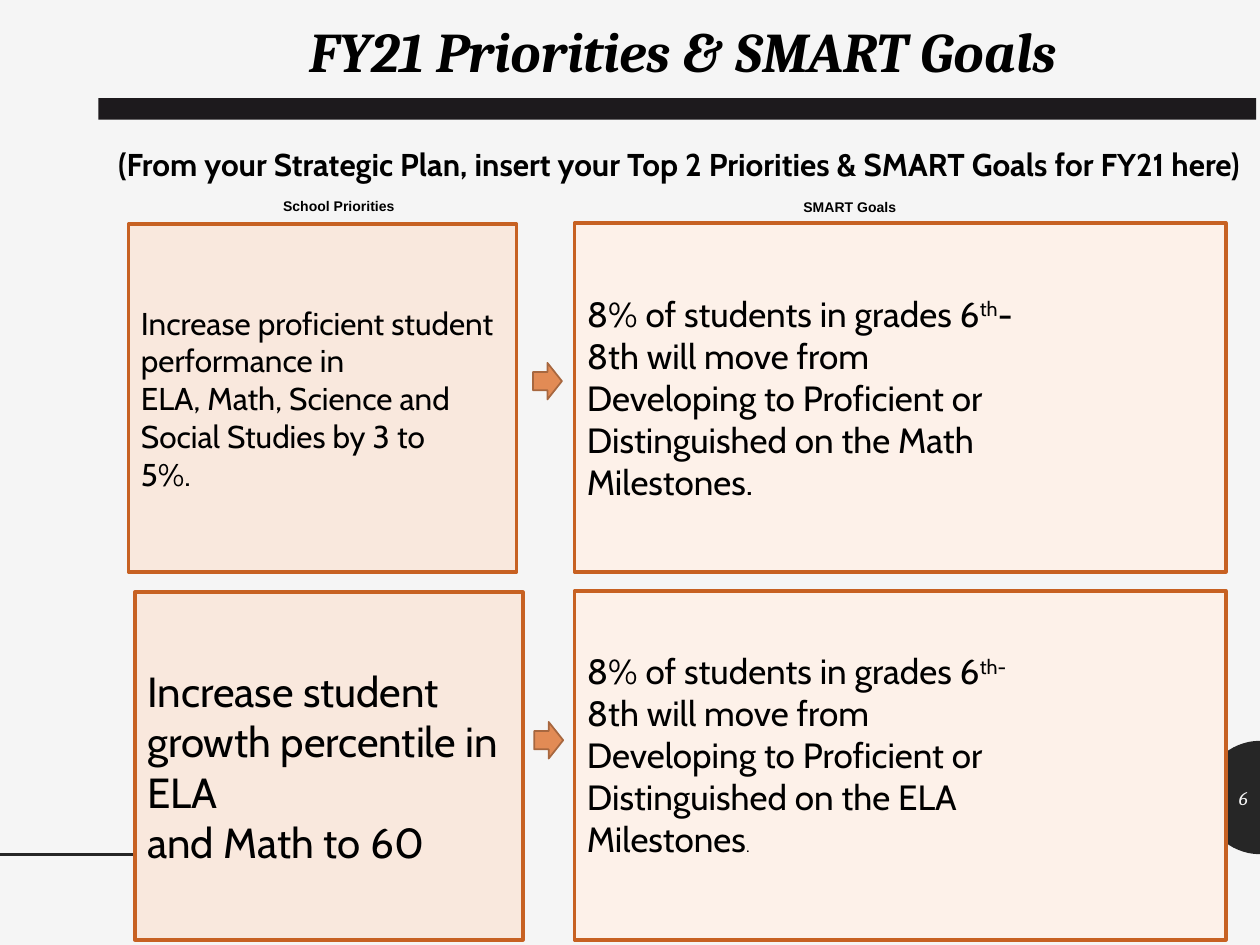
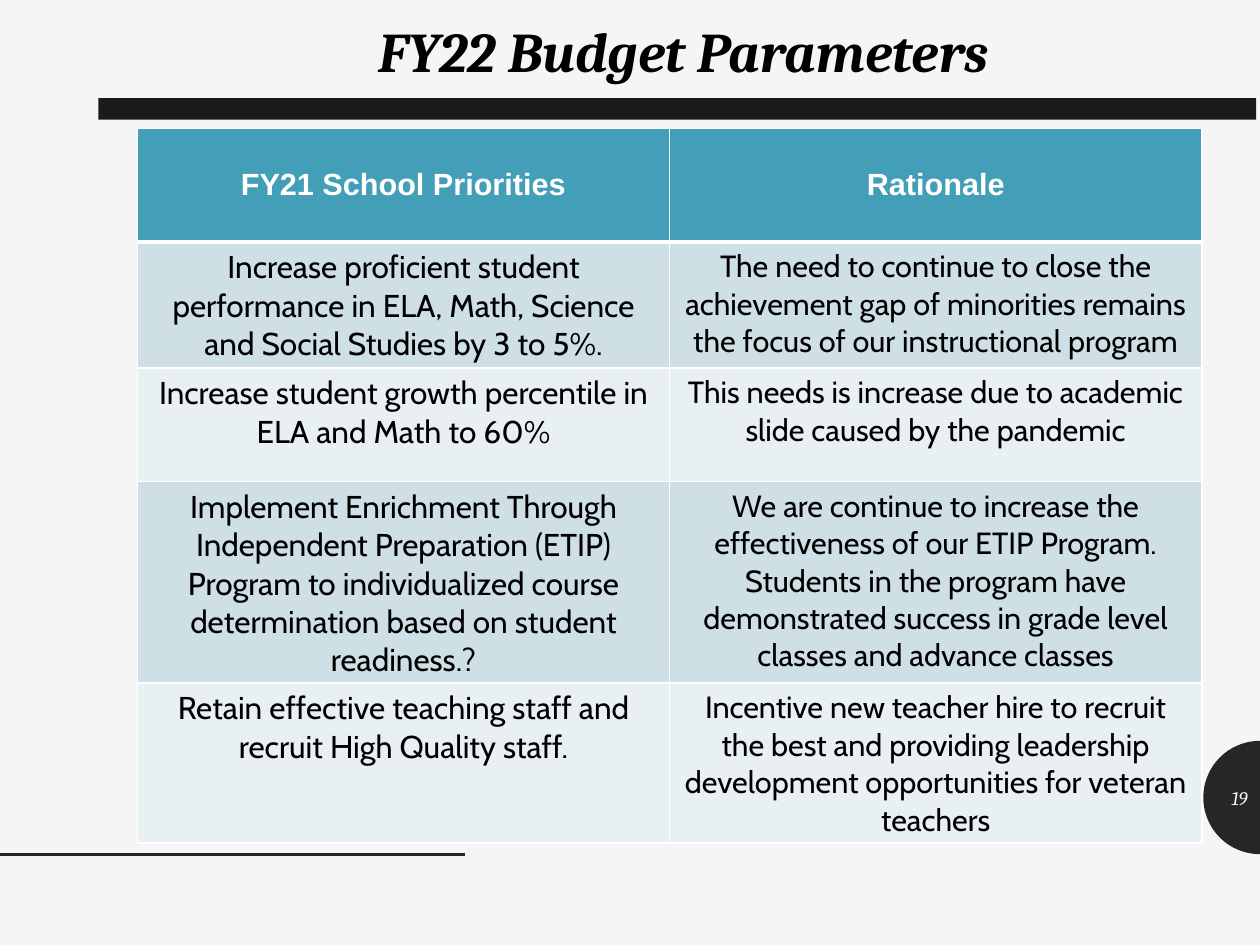
from math import cos, pi, sin
from lxml.etree import SubElement
from pptx import Presentation
from pptx.dml.color import RGBColor
from pptx.enum.shapes import MSO_CONNECTOR, MSO_SHAPE
from pptx.enum.text import MSO_ANCHOR, PP_ALIGN
from pptx.oxml.ns import qn
from pptx.util import Inches, Pt

PAPER = RGBColor(0xF5, 0xF5, 0xF5)
INK = RGBColor(0x26, 0x26, 0x26)
BAND = RGBColor(0x1D, 0x1A, 0x1D)
BLACK = RGBColor(0, 0, 0)
WHITE = RGBColor(0xFF, 0xFF, 0xFF)
RUST = RGBColor(0xC7, 0x61, 0x22)
PEACH = RGBColor(0xF9, 0xE8, 0xDD)
CREAM = RGBColor(0xFD, 0xF1, 0xE9)
ORANGE = RGBColor(0xE2, 0x8B, 0x55)
BROWN = RGBColor(0xA7, 0x67, 0x3F)
TEAL = RGBColor(0x43, 0x9E, 0xB7)
MIST = RGBColor(0xCF, 0xDF, 0xE6)
PALE = RGBColor(0xE9, 0xF0, 0xF3)

TITLE = {"name": "Cambria", "size": Pt(32), "bold": True, "italic": True}
HINT = {"name": "Cabin", "size": Pt(18), "bold": True}
LABEL = {"name": "Arial", "size": Pt(8), "bold": True}
NUMBER = {"name": "Cambria", "size": Pt(11), "italic": True}
HEAD = {"name": "Arial", "size": Pt(17.5), "bold": True}
BODY = {"name": "Cabin", "bold": False}

PLAN = [
    ["Increase proficient student performance in ELA, Math, Science and "
     "Social Studies by 3 to 5%.",
     "The need to continue to close the achievement gap of minorities remains "
     "the focus of our instructional program"],
    ["Increase student growth percentile in ELA and Math to 60%",
     "This needs is increase due to academic slide caused by the pandemic"],
    ["Implement Enrichment Through Independent Preparation (ETIP) Program to "
     "individualized course determination based on student readiness.?",
     "We are continue to increase the effectiveness of our ETIP Program. "
     "Students in the program have demonstrated success in grade level "
     "classes and advance classes"],
    ["Retain effective teaching staff and recruit High Quality staff.",
     "Incentive new teacher hire to recruit the best and providing leadership "
     "development opportunities for veteran teachers"],
]


def style(item, values):
    """Set every attribute named in a dict."""
    for key, value in values.items():
        setattr(item, key, value)


def write(frame, lines, look, color=BLACK, align=PP_ALIGN.LEFT):
    """Write lines; a line is a string or a list of (text, changes, raise)."""
    for i, line in enumerate(lines):
        para = frame.add_paragraph() if i else frame.paragraphs[0]
        para.alignment = align
        parts = [(line, {}, 0)] if isinstance(line, str) else line
        for words, change, lift in parts:
            run = para.add_run()
            run.text = words
            style(run.font, {**look, **change})
            run.font.color.rgb = color
            if lift:
                run.font._element.set("baseline", str(lift * 1000))


def text(slide, box, words, look, color=BLACK, align=PP_ALIGN.CENTER,
         anchor=MSO_ANCHOR.TOP, wrap=True):
    """Add one text box."""
    frame = slide.shapes.add_textbox(*map(Inches, box)).text_frame
    style(frame, {"word_wrap": wrap, "vertical_anchor": anchor})
    write(frame, [words], look, color, align)


def paint(shape, fill, line=None, width=2):
    """Give a shape a flat fill and an optional outline."""
    shape.shadow.inherit = False
    shape.fill.solid()
    shape.fill.fore_color.rgb = fill
    if line is None:
        shape.line.fill.background()
    else:
        shape.line.color.rgb = line
        shape.line.width = Pt(width)


def panel(slide, box, fill, lines, size, foot=0.05):
    """Add an outlined box of left-aligned text."""
    shape = slide.shapes.add_shape(MSO_SHAPE.RECTANGLE, *map(Inches, box))
    paint(shape, fill, RUST)
    style(shape.text_frame, {"word_wrap": True,
                             "vertical_anchor": MSO_ANCHOR.MIDDLE,
                             "margin_bottom": Inches(foot)})
    write(shape.text_frame, lines, {**BODY, "size": Pt(size)})


def arrow(slide, left, top):
    """Add a small block arrow."""
    shape = slide.shapes.add_shape(MSO_SHAPE.RIGHT_ARROW, Inches(left),
                                   Inches(top), Inches(0.23), Inches(0.29))
    paint(shape, ORANGE, BROWN, 1)


def badge(slide):
    """Add the half disc at the right edge."""
    turns = [pi * i / 32 for i in range(33)]
    points = [(Inches(10 - 0.45 * sin(t)), Inches(6.33 - 0.45 * cos(t)))
              for t in turns]
    build = slide.shapes.build_freeform(*points[0])
    build.add_line_segments(points[1:], close=True)
    paint(build.convert_to_shape(), INK)


def base(deck, title):
    """Add a slide with its shared parts."""
    slide = deck.slides.add_slide(deck.slide_layouts[6])
    slide.background.fill.solid()
    slide.background.fill.fore_color.rgb = PAPER
    badge(slide)
    rule = slide.shapes.add_connector(MSO_CONNECTOR.STRAIGHT, 0, Inches(6.78),
                                      Inches(3.69), Inches(6.78))
    rule.line.color.rgb = INK
    rule.line.width = Pt(2)
    SubElement(rule._element.spPr, qn("a:effectLst"))
    band = slide.shapes.add_shape(MSO_SHAPE.RECTANGLE, Inches(0.78),
                                  Inches(0.78), Inches(9.19), Inches(0.17))
    paint(band, BAND)
    text(slide, (0.96, 0.08, 8.93, 0.64), title, TITLE)
    return slide


def number(slide, words):
    """Write the slide number on the half disc."""
    text(slide, (9.55, 6.13, 0.45, 0.4), words, NUMBER, PAPER,
         PP_ALIGN.RIGHT, MSO_ANCHOR.MIDDLE)


def edge(cell, foot):
    """Draw white cell borders, with a given bottom width."""
    props = cell._tc.get_or_add_tcPr()
    for side, width in (("L", 1), ("R", 1), ("T", 1), ("B", foot)):
        line = SubElement(props, qn("a:ln" + side), w=str(Pt(width)))
        fill = SubElement(line, qn("a:solidFill"))
        SubElement(fill, qn("a:srgbClr"), val=str(WHITE))


def grid(slide, rows, heights):
    """Add the two-column table with a header row."""
    table = slide.shapes.add_table(len(rows), 2, Inches(1.09), Inches(1.02),
                                   Inches(8.45), Inches(sum(heights))).table
    for r, (row, height) in enumerate(zip(rows, heights)):
        table.rows[r].height = Inches(height)
        for c, words in enumerate(row):
            cell = table.cell(r, c)
            edge(cell, 1 if r else 3)
            cell.fill.solid()
            cell.fill.fore_color.rgb = (MIST if r % 2 else PALE) if r else TEAL
            cell.vertical_anchor = MSO_ANCHOR.TOP if r else MSO_ANCHOR.MIDDLE
            look = {**BODY, "size": Pt(17.5 if c else 18)} if r else HEAD
            write(cell.text_frame, [words], look, BLACK if r else WHITE,
                  PP_ALIGN.CENTER)


def goal(subject, tail, end):
    """Return the lines of one SMART goal."""
    return [[("8% of students in grades 6", {}, 0), *tail],
            "8th will move from", "Developing to Proficient or",
            "Distinguished on the " + subject, [("Milestones", {}, 0), end]]


def goals(deck):
    """Build the priorities and goals slide."""
    slide = base(deck, "FY21 Priorities & SMART Goals")
    text(slide, (0.78, 1.1, 9.22, 0.71), "(From your Strategic Plan, insert "
         "your Top 2 Priorities & SMART Goals for FY21 here)", HINT)
    text(slide, (2.14, 1.52, 1.1, 0.24), "School Priorities", LABEL, wrap=False)
    text(slide, (6.1, 1.53, 1.29, 0.24), "SMART Goals", LABEL)
    math = goal("Math", [("th", {}, 30), ("-", {}, 0)], (".", {}, 0))
    ela = goal("ELA", [("th-", {}, 30)], (".", {"size": Pt(10)}, 0))
    score = ["Increase proficient student performance in",
             "ELA, Math, Science and Social Studies by 3 to", "5%."]
    growth = ["Increase student growth percentile in ELA", "and Math to 60"]
    panel(slide, (4.56, 1.77, 5.17, 2.77), CREAM, math, 20)
    panel(slide, (1.02, 1.78, 3.08, 2.76), PEACH, score, 18)
    panel(slide, (4.56, 4.69, 5.17, 2.77), CREAM, ela, 20, 0.22)
    panel(slide, (1.07, 4.7, 3.08, 2.76), PEACH, growth, 24)
    arrow(slide, 4.23, 2.88)
    arrow(slide, 4.24, 5.73)
    number(slide, "6")


def budget(deck):
    """Build the budget slide."""
    slide = base(deck, "FY22 Budget Parameters")
    grid(slide, [["FY21 School Priorities", "Rationale"], *PLAN],
         [0.9, 1, 0.9, 1.6, 1.27])
    number(slide, "19")


def main():
    """Build and save the deck."""
    deck = Presentation()
    style(deck, {"slide_width": Inches(10), "slide_height": Inches(7.5)})
    goals(deck)
    budget(deck)
    deck.save("out.pptx")


if __name__ == "__main__":
    main()
